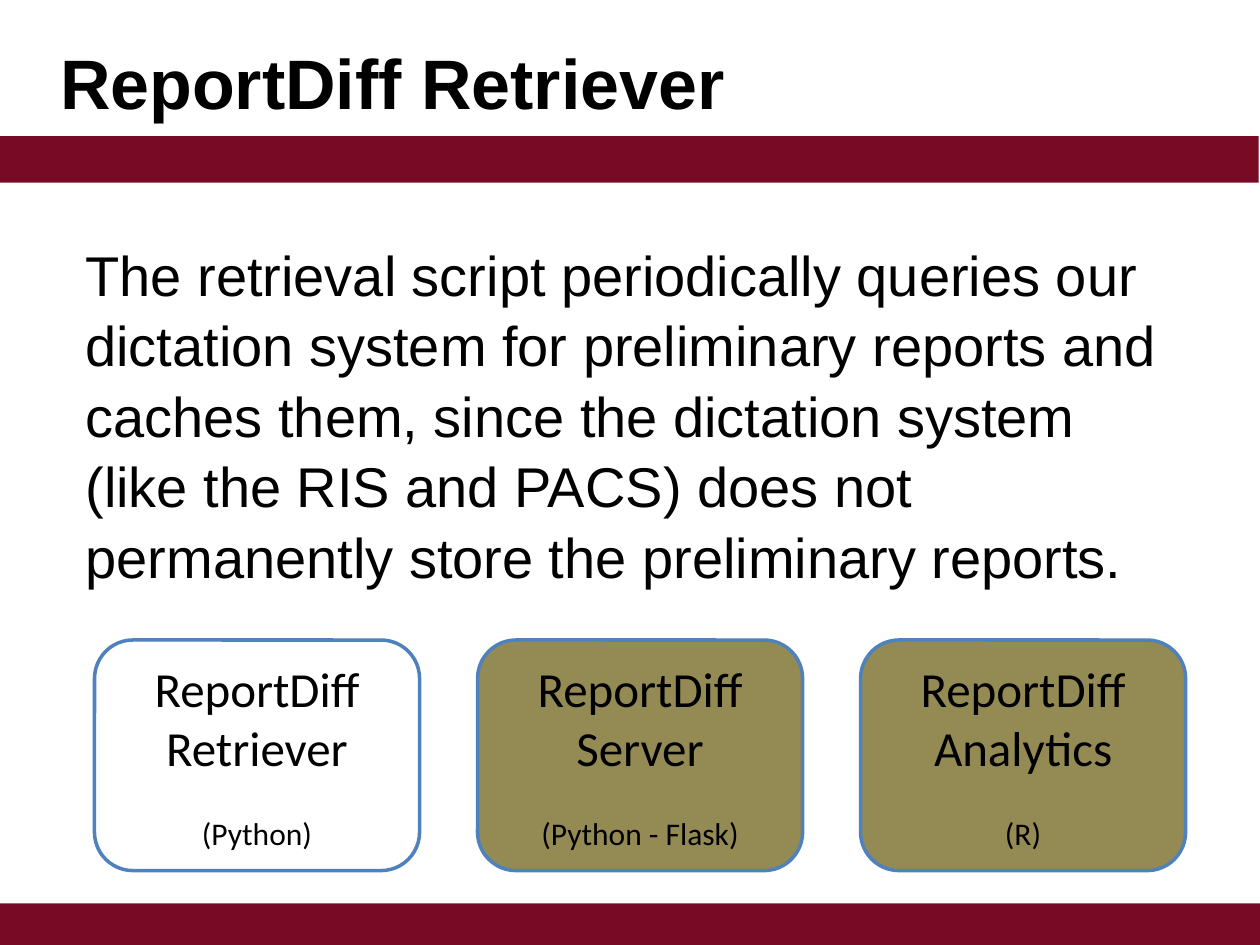
from dataclasses import dataclass

from pptx import Presentation
from pptx.dml.color import RGBColor
from pptx.enum.shapes import MSO_SHAPE
from pptx.enum.text import MSO_ANCHOR, PP_ALIGN
from pptx.util import Inches, Pt

RECT, ROUND = MSO_SHAPE.RECTANGLE, MSO_SHAPE.ROUNDED_RECTANGLE
TOP, MIDDLE = MSO_ANCHOR.TOP, MSO_ANCHOR.MIDDLE
CENTER = PP_ALIGN.CENTER


@dataclass(frozen=True)
class Theme:
    ink: str = "000000"
    band: str = "790A26"
    line: str = "4F81BD"
    white: str = "FFFFFF"
    olive: str = "948A54"
    sans: str = "Arial"
    label: str = "Calibri"
    title: int = 40
    body: int = 32
    name: int = 28
    note: int = 18


class Deck:
    """Draw styled elements on the current slide."""

    def __init__(self, theme, slide):
        self.theme, self.slide = theme, slide

    def run(self, para, text, size, font, bold=False):
        run = para.add_run()
        run.text = text
        run.font.size, run.font.name, run.font.bold = Pt(size), font, bold
        run.font.color.rgb = RGBColor.from_string(self.theme.ink)

    def shape(self, kind, spot, fill):
        shape = self.slide.shapes.add_shape(kind, *map(Inches, spot))
        shape.shadow.inherit = False
        shape.fill.solid()
        shape.fill.fore_color.rgb = RGBColor.from_string(fill)
        return shape

    def band(self, spot):
        self.shape(RECT, spot, self.theme.band).line.fill.background()

    def text(self, spot, text, size, anchor=TOP, bold=False, pitch=1.0):
        frame = self.slide.shapes.add_textbox(*map(Inches, spot)).text_frame
        frame.word_wrap = True
        frame.vertical_anchor = anchor
        para = frame.paragraphs[0]
        para.line_spacing = pitch
        self.run(para, text, size, self.theme.sans, bold)

    def card(self, spot, fill, part, tool):
        theme = self.theme
        shape = self.shape(ROUND, spot, fill)
        shape.line.color.rgb = RGBColor.from_string(theme.line)
        shape.line.width = Pt(2)
        frame = shape.text_frame
        frame.word_wrap = True
        frame.vertical_anchor = MIDDLE
        rows = [("ReportDiff", theme.name, 0), (part, theme.name, 0),
                (tool, theme.note, 22)]
        for i, (text, size, gap) in enumerate(rows):
            para = frame.add_paragraph() if i else frame.paragraphs[0]
            para.alignment = CENTER
            para.space_before = Pt(gap)
            self.run(para, text, size, theme.label)


def main():
    prs = Presentation()
    prs.slide_width, prs.slide_height = Inches(10), Inches(7.5)
    theme = Theme()
    deck = Deck(theme, prs.slides.add_slide(prs.slide_layouts[6]))

    deck.band((-0.01, 1.08, 10, 0.37))
    deck.band((0, 7.17, 10.01, 0.37))
    deck.text((0.38, 0.02, 9.33, 1.25), "ReportDiff Retriever",
              theme.title, MIDDLE, bold=True)
    deck.text((0.58, 1.83, 8.83, 3.92),
              "The retrieval script periodically queries our dictation system "
              "for preliminary reports and caches them, since the dictation "
              "system (like the RIS and PACS) does not permanently store the "
              "preliminary reports.", theme.body, pitch=1.05)

    cards = [(theme.white, "Retriever", "(Python)"),
             (theme.olive, "Server", "(Python - Flask)"),
             (theme.olive, "Analytics", "(R)")]
    for i, card in enumerate(cards):
        deck.card((0.75 + 3.04 * i, 5.08, 2.58, 1.83), *card)

    prs.save("out.pptx")


if __name__ == "__main__":
    main()
